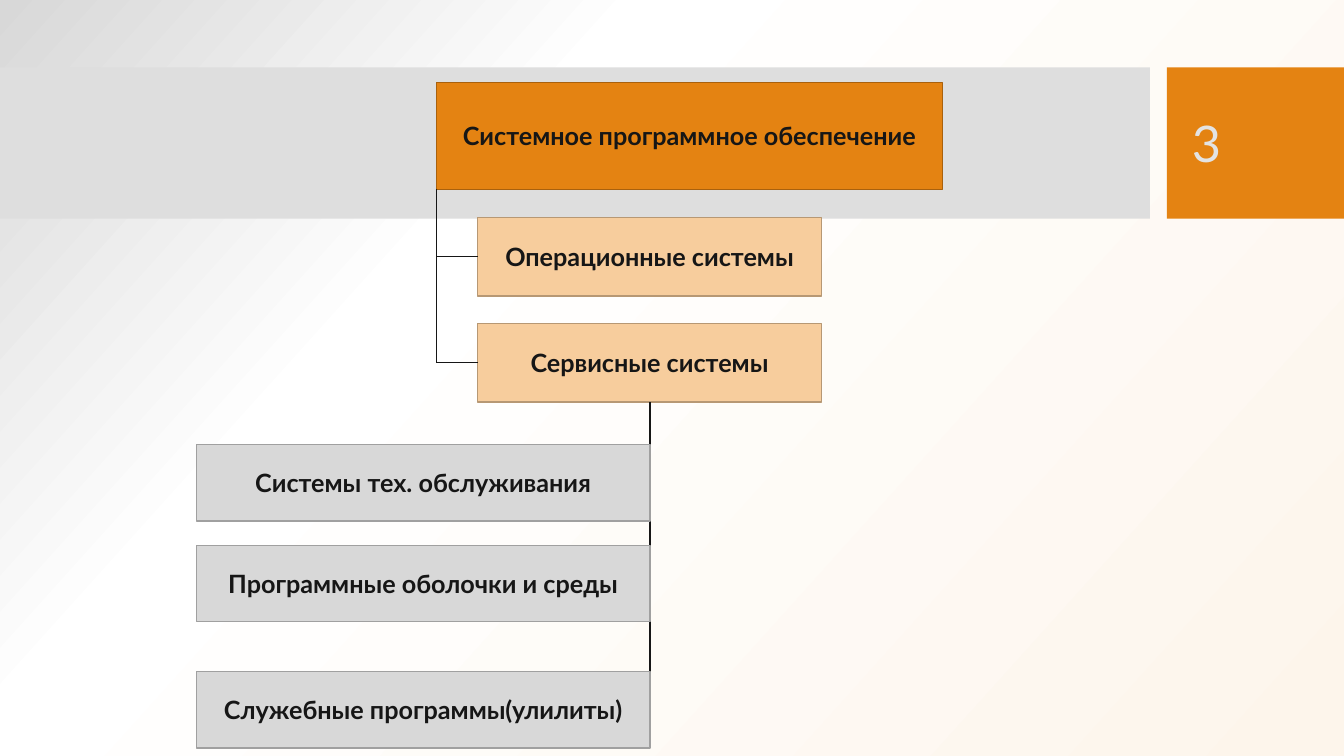
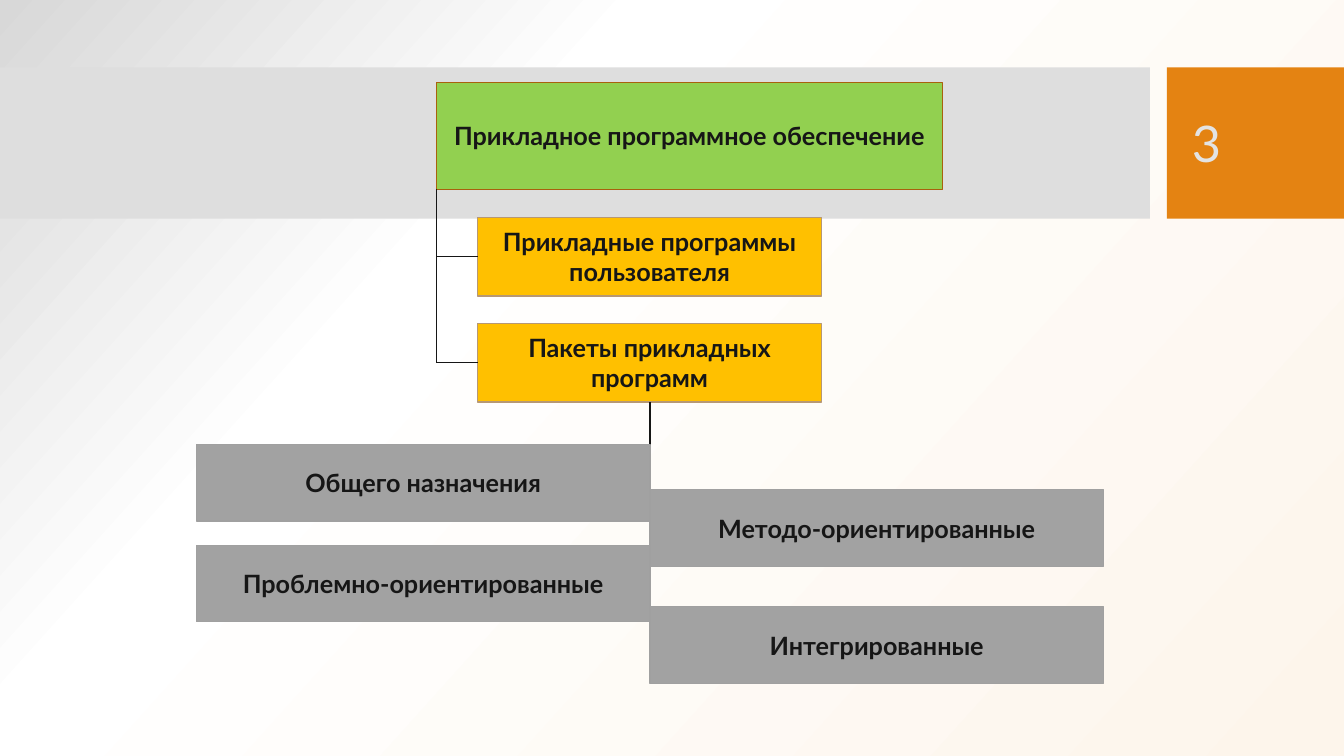
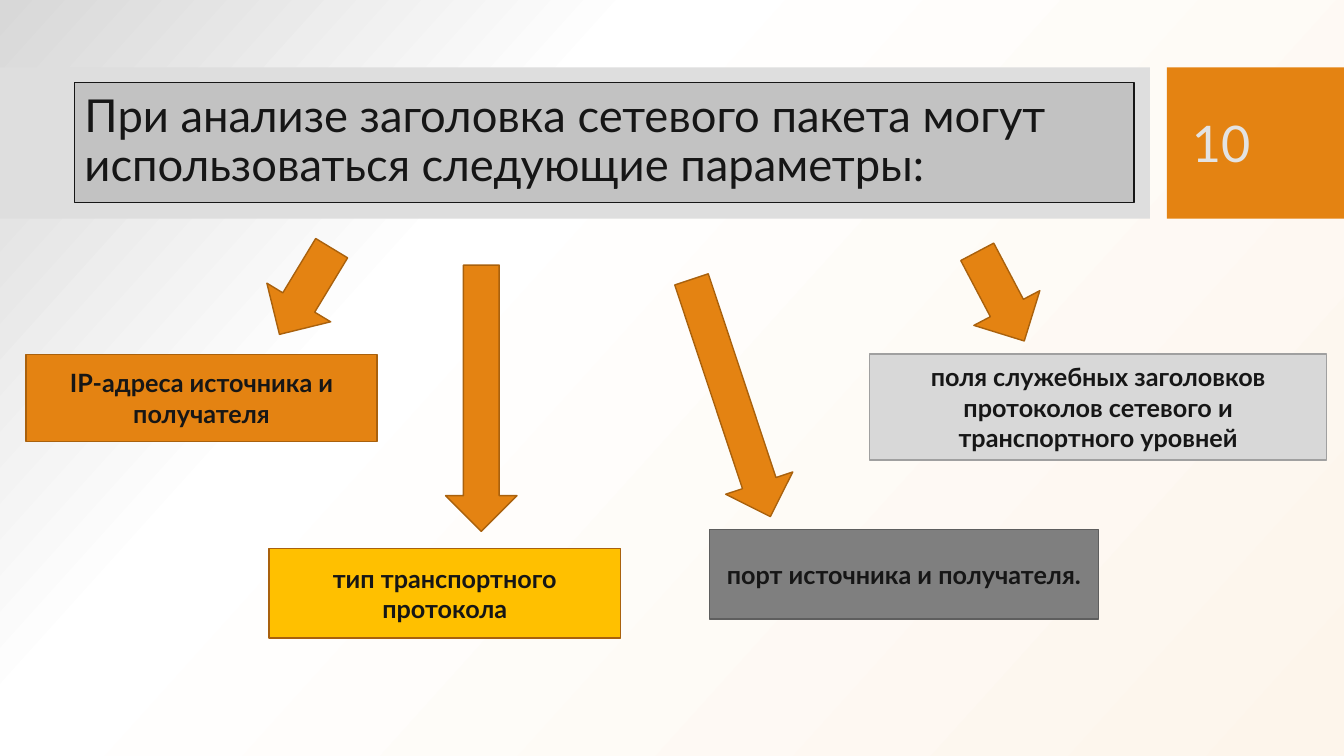
import pptx
import pptx.dml.color
import pptx.enum.shapes
import pptx.enum.text
import pptx.oxml
import pptx.oxml.ns
import pptx.util

COLOURS = {
    "ink": "161616", "number": "E3E3E3", "band": "DEDEDE",
    "orange": "E48312", "orange_edge": "A9610D",
    "peach": "F7CD9D", "peach_edge": "B79874",
    "green": "92D050", "gold": "FFC000",
    "silver": "D8D8D8", "silver_edge": "A0A0A0", "grey": "A2A2A2",
    "dark": "7F7F7F", "dark_edge": "5E5E5E", "title": "C2C2C2",
}
BACKGROUND = ((0, "D8D8D8"), (32, "FFFFFF"), (100, "FDF5EB"))
BACKGROUND_ANGLE = 42
FONT = "Lato"
Cm = pptx.util.Cm
SHAPES = pptx.enum.shapes.MSO_SHAPE
ALIGN = pptx.enum.text.PP_ALIGN


def colour(name):
    return pptx.dml.color.RGBColor.from_string(COLOURS[name])


class Deck:
    def __init__(self):
        self.presentation = pptx.Presentation()
        self.presentation.slide_width = Cm(33.87)
        self.presentation.slide_height = Cm(19.05)
        self.slide = None
        self.paint_background()

    def paint_background(self):
        fill = self.presentation.slide_master.background.fill
        fill.gradient()
        stops = "".join(
            f'<a:gs pos="{position * 1000}"><a:srgbClr val="{value}"/></a:gs>'
            for position, value in BACKGROUND)
        gradient = pptx.oxml.parse_xml(
            f'<a:gradFill {pptx.oxml.ns.nsdecls("a")} rotWithShape="1">'
            f'<a:gsLst>{stops}</a:gsLst>'
            f'<a:lin ang="{BACKGROUND_ANGLE * 60000}" scaled="0"/></a:gradFill>')
        master = self.presentation.slide_master.element
        old = master.find(".//" + pptx.oxml.ns.qn("p:bgPr")).find(
            pptx.oxml.ns.qn("a:gradFill"))
        old.getparent().replace(old, gradient)

    def add_slide(self, number):
        layout = self.presentation.slide_layouts[6]
        self.slide = self.presentation.slides.add_slide(layout)
        self.shape((0, 1.7, 28.98, 3.81), "band")
        self.shape((29.41, 1.7, 4.46, 3.81), "orange")
        text_box = self.slide.shapes.add_textbox(
            Cm(29.79), Cm(2.08), Cm(3.2), Cm(3.02))
        self.set_text(text_box, number, 36, "number", ALIGN.LEFT)

    def set_text(self, shape, text, size, ink="ink", align=ALIGN.CENTER, bold=False):
        frame = shape.text_frame
        frame.word_wrap = True
        frame.vertical_anchor = pptx.enum.text.MSO_ANCHOR.MIDDLE
        frame.text = text
        paragraph = frame.paragraphs[0]
        paragraph.alignment = align
        font = paragraph.runs[0].font
        font.name = FONT
        font.size = pptx.util.Pt(size)
        font.bold = bold
        font.color.rgb = colour(ink)
        return paragraph

    def shape(self, box, fill, edge=None, width=1, kind=SHAPES.RECTANGLE):
        shape = self.slide.shapes.add_shape(kind, *map(Cm, box))
        shape.shadow.inherit = False
        shape.fill.solid()
        shape.fill.fore_color.rgb = colour(fill)
        if edge:
            shape.line.color.rgb = colour(edge)
            shape.line.width = pptx.util.Pt(width)
        else:
            shape.line.fill.background()
        return shape

    def label(self, box, text, fill, edge):
        self.set_text(self.shape(box, fill, edge), text, 18, bold=True)

    def title(self, text):
        shape = self.shape((1.88, 2.08, 26.7, 3.02), "title", "ink", 0.75)
        self.set_text(shape, text, 32.4, align=ALIGN.LEFT).line_spacing = 0.9

    def arrow(self, box, kind, rotation=0):
        self.shape(box, "orange", "orange_edge", kind=kind).rotation = rotation

    def line(self, start, end, width=0.75):
        connector = self.slide.shapes.add_connector(
            pptx.enum.shapes.MSO_CONNECTOR.STRAIGHT, *map(Cm, start + end))
        connector.line.color.rgb = colour("ink")
        connector.line.width = pptx.util.Pt(width)
        connector.element.spPr.append(pptx.oxml.parse_xml(
            f'<a:effectLst {pptx.oxml.ns.nsdecls("a")}/>'))

    def tree(self, root, branches, leaves, stem_end, fills):
        root_fill, branch_fill, leaf_fill = fills
        trunk, root_bottom, stem = 11, 4.77, 16.38
        branch_left, branch_top, branch_height, pitch = 12.04, 5.48, 1.98, 2.67
        leaf_width, leaf_height = 11.43, 1.93

        self.label((trunk, 2.08, 12.75, root_bottom - 2.08), root,
                   root_fill, "orange_edge")
        for index, text in enumerate(branches):
            top = branch_top + index * pitch
            middle = top + branch_height / 2
            self.label((branch_left, top, 8.66, branch_height), text,
                       branch_fill, "peach_edge")
            self.line((trunk, middle), (branch_left, middle))
        self.line((trunk, root_bottom), (trunk, middle))
        self.line((stem, top + branch_height), (stem, stem_end), 1.5)
        for text, side, top in leaves:
            left = stem - leaf_width if side == "left" else stem
            self.label((left, top, leaf_width, leaf_height), text,
                       leaf_fill, "silver_edge")


def main():
    deck = Deck()

    deck.add_slide("3")
    deck.tree(
        "Системное программное обеспечение",
        ("Операционные системы", "Сервисные системы"),
        (("Системы тех. обслуживания", "left", 11.2),
         ("Программные оболочки и среды", "left", 13.74),
         ("Служебные программы(улилиты)", "left", 16.92)),
        17.91, ("orange", "peach", "silver"))

    deck.add_slide("3")
    deck.tree(
        "Прикладное программное обеспечение",
        ("Прикладные программы пользователя", "Пакеты прикладных программ"),
        (("Общего назначения", "left", 11.2),
         ("Проблемно-ориентированные", "left", 13.74),
         ("Методо-ориентированные", "right", 12.34),
         ("Интегрированные", "right", 15.29)),
        17.22, ("green", "gold", "grey"))

    deck.add_slide("10")
    deck.title("При анализе заголовка сетевого пакета могут "
               "использоваться следующие параметры:")
    for box, text, fill, edge in (
            ((0.66, 8.94, 8.84, 2.18), "IP-адреса источника и получателя",
             "orange", "orange_edge"),
            ((6.78, 13.82, 8.86, 2.26), "тип транспортного протокола",
             "gold", "orange_edge"),
            ((17.88, 13.34, 9.8, 2.26), "порт источника и получателя.",
             "dark", "dark_edge"),
            ((21.92, 8.92, 11.51, 2.67),
             "поля служебных заголовков протоколов сетевого и "
             "транспортного уровней", "silver", "silver_edge")):
        deck.label(box, text, fill, edge)
    deck.arrow((6.43, 6.4, 2.54, 1.88), SHAPES.RIGHT_ARROW, 121.2)
    deck.arrow((11.23, 6.68, 1.8, 6.71), SHAPES.DOWN_ARROW)
    deck.arrow((15.27, 9.14, 6.3, 1.78), SHAPES.RIGHT_ARROW, 71.6)
    deck.arrow((23.95, 6.53, 2.54, 1.88), SHAPES.RIGHT_ARROW, 62.2)

    deck.presentation.save("out.pptx")


if __name__ == "__main__":
    main()
